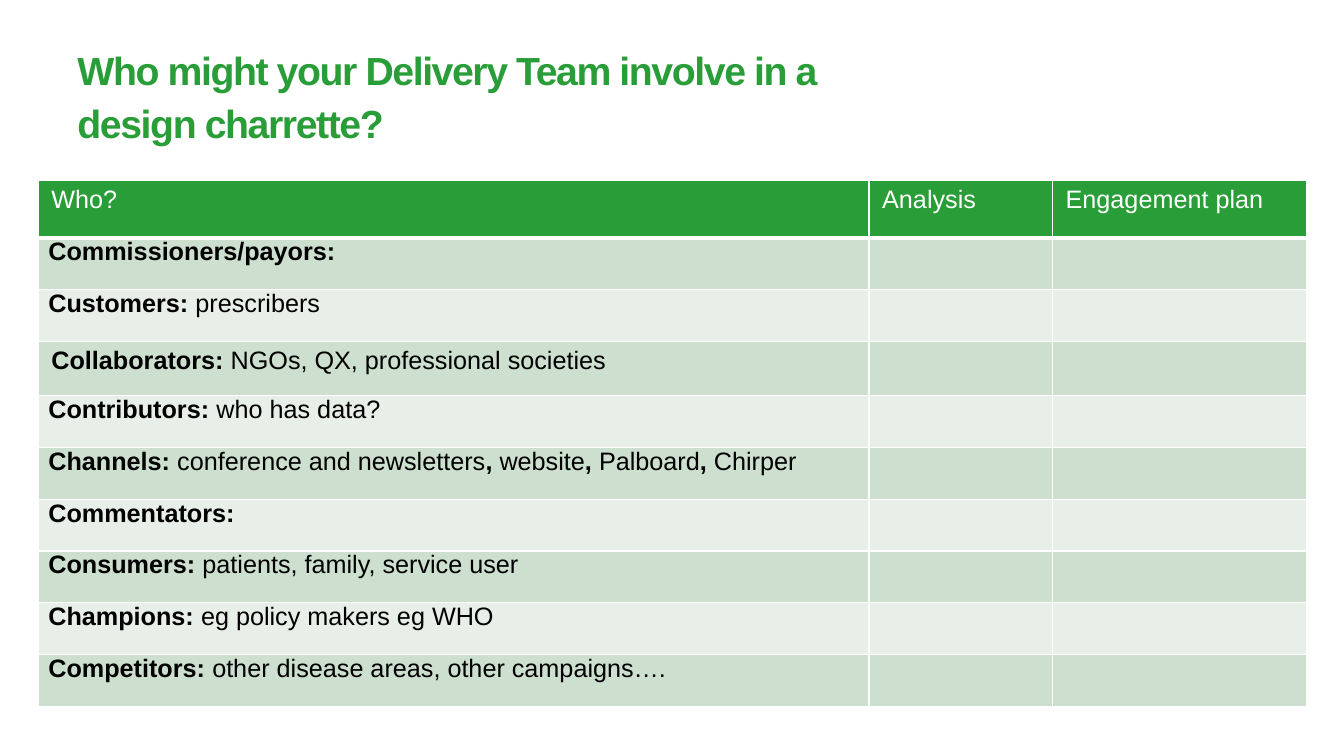
from lxml import etree
from pptx import Presentation, util as u
from pptx.dml.color import RGBColor
from pptx.enum import text
from pptx.oxml.ns import qn

TITLE = "Who might your Delivery Team involve in a design charrette?"
HEADERS = ["Who?", "Analysis", "Engagement plan"]
# Pieces of each entry alternate between bold and regular.
GROUPS = [
    ["Commissioners/payors:"],
    ["Customers: ", "prescribers"],
    ["Collaborators: ", "NGOs, QX, professional societies"],
    ["Contributors: ", "who has data?"],
    ["Channels: ", "conference and newsletters", ", ", "website", ", ",
     "Palboard", ", ", "Chirper"],
    ["Commentators:"],
    ["Consumers: ", "patients, family, service user"],
    ["Champions: ", "eg policy makers eg WHO"],
    ["Competitors: ", "other disease areas, other campaigns…."],
]

THEME = {
    "font": "Arial", "title_size": 28, "table_size": 18,
    "green": "299D37", "white": "FFFFFF", "black": "000000",
    "bands": ["CDDFCE", "E8EFE8"],
}
COL_WIDTHS = [8.24, 1.82, 2.52]
TABLE_HEIGHT, HEADER_HEIGHT, TALL_HEIGHT = 5.22, 0.57, 0.54
TALL_ROW = 3
WIDE_MARGINS, TIGHT_MARGINS = (0.13, 0.05), (0.1, 0)


def add_text(p, content, size=THEME["table_size"], color=THEME["black"],
             bold=False, spacing=None):
    r = p.add_run()
    r.text = content
    r.font.name = THEME["font"]
    r.font.size = u.Pt(size)
    r.font.bold = bold
    r.font.color.rgb = RGBColor.from_string(color)
    if spacing is not None:
        r._r.get_or_add_rPr().set("spc", str(int(spacing * 100)))


def style_cell(cell, fill, margins, bottom=1):
    """Set the margins, white borders (points) and fill of a cell."""
    cell.margin_left = cell.margin_right = u.Inches(margins[0])
    cell.margin_top = cell.margin_bottom = u.Inches(margins[1])
    tcPr = cell._tc.get_or_add_tcPr()
    for side, width in (("L", 1), ("R", 1), ("T", 1), ("B", bottom)):
        ln = etree.SubElement(tcPr, qn(f"a:ln{side}"), w=str(u.Pt(width)))
        solid = etree.SubElement(ln, qn("a:solidFill"))
        etree.SubElement(solid, qn("a:srgbClr"), val=THEME["white"])
    cell.fill.solid()
    cell.fill.fore_color.rgb = RGBColor.from_string(fill)


def add_title(slide):
    box = slide.shapes.add_textbox(u.Inches(0.67), u.Inches(0.3),
                                   u.Inches(7.59), u.Inches(1.25))
    tf = box.text_frame
    tf.word_wrap = True
    tf.vertical_anchor = text.MSO_ANCHOR.MIDDLE
    p = tf.paragraphs[0]
    p.line_spacing = u.Pt(38)
    add_text(p, TITLE, size=THEME["title_size"], color=THEME["green"],
             bold=True, spacing=-1)


def add_group_table(slide):
    table = slide.shapes.add_table(
        len(GROUPS) + 1, len(HEADERS), u.Inches(0.38), u.Inches(1.79),
        u.Inches(sum(COL_WIDTHS)), u.Inches(TABLE_HEIGHT)).table
    for column, width in zip(table.columns, COL_WIDTHS):
        column.width = u.Inches(width)
    row_height = (TABLE_HEIGHT - HEADER_HEIGHT - TALL_HEIGHT) / (len(GROUPS) - 1)
    special = {0: HEADER_HEIGHT, TALL_ROW: TALL_HEIGHT}
    for i, row in enumerate(table.rows):
        row.height = u.Inches(special.get(i, row_height))

    for col, header in enumerate(HEADERS):
        cell = table.cell(0, col)
        style_cell(cell, THEME["green"], WIDE_MARGINS, bottom=3)
        add_text(cell.text_frame.paragraphs[0], header, color=THEME["white"])

    for i, pieces in enumerate(GROUPS, start=1):
        margins = WIDE_MARGINS if i == TALL_ROW else TIGHT_MARGINS
        for col in range(len(HEADERS)):
            style_cell(table.cell(i, col), THEME["bands"][(i - 1) % 2], margins)
        p = table.cell(i, 0).text_frame.paragraphs[0]
        for n, piece in enumerate(pieces):
            add_text(p, piece, bold=n % 2 == 0)


def main():
    prs = Presentation()
    prs.slide_width, prs.slide_height = u.Inches(13.33), u.Inches(7.5)
    slide = prs.slides.add_slide(prs.slide_layouts[6])
    add_title(slide)
    add_group_table(slide)
    prs.save("out.pptx")


if __name__ == "__main__":
    main()
